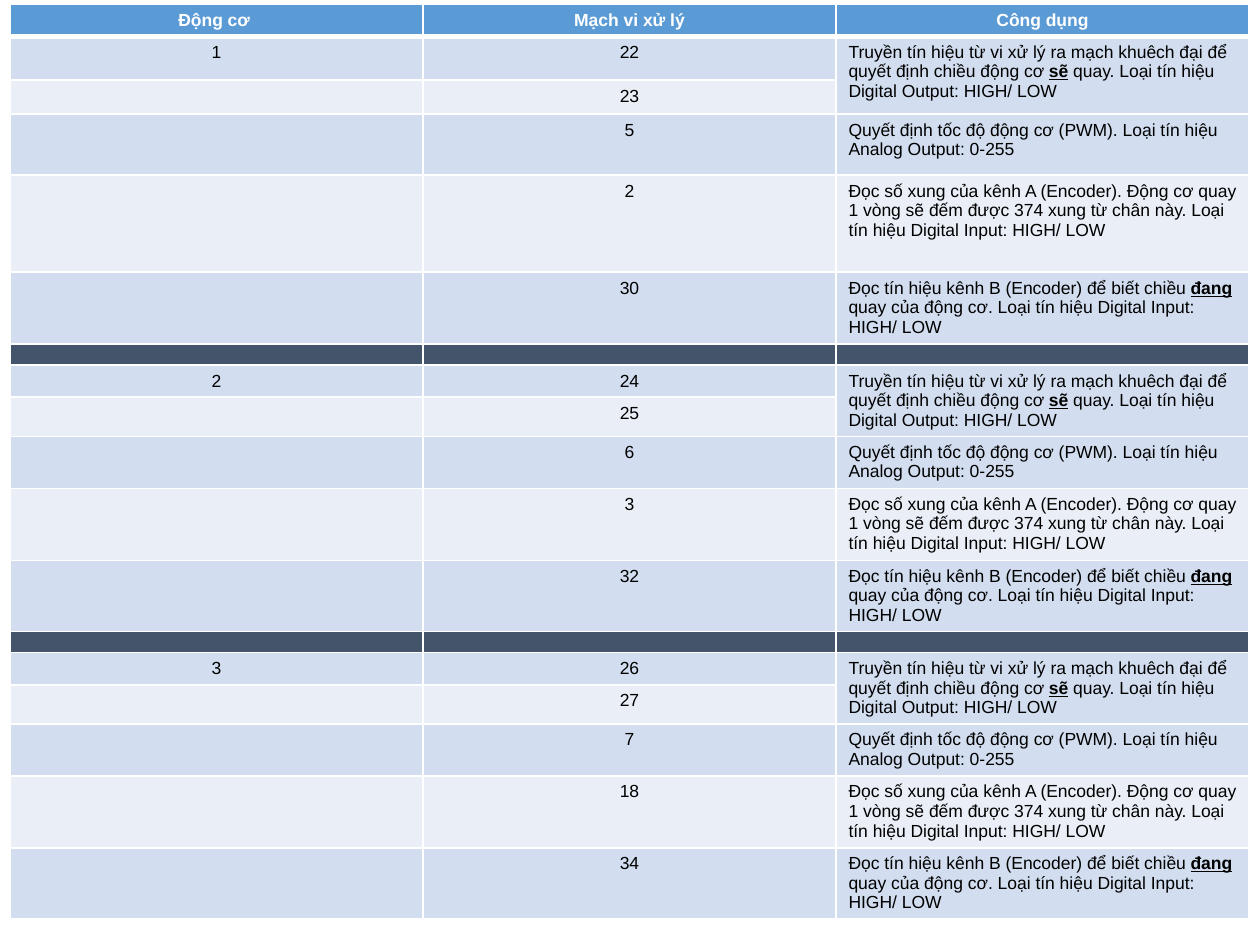
import lxml.etree
import pptx
import pptx.dml.color
import pptx.enum.text
import pptx.oxml.ns
import pptx.util

EMU_PER_PX = 914400 / 126

THEME = {
    "font": "Arial",
    "text_size": 10,
    "divider_size": 4,
    "header": "5B9BD5",
    "bands": ("D2DEEF", "EAEFF7"),
    "divider": "44546A",
    "border": "FFFFFF",
    "header_text": "FFFFFF",
    "body_text": "000000",
}

# Each purpose is a list of (text, emphasised) spans
PURPOSES = [
    [("Truyền tín hiệu từ vi xử lý ra mạch khuêch đại để quyết định chiều động cơ ", False),
     ("sẽ", True),
     (" quay. Loại tín hiệu Digital Output: HIGH/ LOW", False)],
    [],
    [("Quyết định tốc độ động cơ (PWM). Loại tín hiệu Analog Output: 0-255", False)],
    [("Đọc số xung của kênh A (Encoder). Động cơ quay 1 vòng sẽ đếm được 374 xung "
      "từ chân này. Loại tín hiệu Digital Input: HIGH/ LOW", False)],
    [("Đọc tín hiệu kênh B (Encoder) để biết chiều ", False),
     ("đang", True),
     (" quay của động cơ. Loại tín hiệu Digital Input: HIGH/ LOW", False)],
]
MOTOR_PINS = [(22, 23, 5, 2, 30), (24, 25, 6, 3, 32), (26, 27, 7, 18, 34)]

HEADER_HEIGHT = 32
DIVIDER_HEIGHT = 21
FIRST_MOTOR_HEIGHTS = (44, 32, 61, 97, 72)
MOTOR_HEIGHTS = (32, 39, 52, 72, 71)


def px(length):
    return pptx.util.Emu(round(length * EMU_PER_PX))


def fill_cell(cell, spans, color, text_color, size, centered, top=1, bottom=1):
    # Borders come before the fill in the cell properties
    properties = cell._tc.get_or_add_tcPr()
    for side, width in (("L", 1), ("R", 1), ("T", top), ("B", bottom)):
        line = lxml.etree.SubElement(
            properties, pptx.oxml.ns.qn("a:ln" + side), w=str(pptx.util.Pt(width)))
        solid = lxml.etree.SubElement(line, pptx.oxml.ns.qn("a:solidFill"))
        lxml.etree.SubElement(solid, pptx.oxml.ns.qn("a:srgbClr"), val=THEME["border"])
    cell.fill.solid()
    cell.fill.fore_color.rgb = pptx.dml.color.RGBColor.from_string(color)

    para = cell.text_frame.paragraphs[0]
    if centered:
        para.alignment = pptx.enum.text.PP_ALIGN.CENTER
    for text, emphasised in spans:
        span = para.add_run()
        span.text = text
        span.font.name = THEME["font"]
        span.font.size = pptx.util.Pt(size)
        span.font.bold = emphasised
        span.font.underline = emphasised and text_color == THEME["body_text"]
        span.font.color.rgb = pptx.dml.color.RGBColor.from_string(text_color)
    # An empty cell takes its line height from the end mark
    if not spans:
        lxml.etree.SubElement(
            para._p, pptx.oxml.ns.qn("a:endParaRPr"), sz=str(size * 100))


# Row contents: kind, height and the three cells' spans
rows = [("header", HEADER_HEIGHT,
         [[("Động cơ ", True)], [("Mạch vi xử lý", True)], [("Công dụng", True)]])]
for motor, pins in enumerate(MOTOR_PINS, start=1):
    if motor > 1:
        rows.append(("divider", DIVIDER_HEIGHT, [[], [], []]))
    heights = FIRST_MOTOR_HEIGHTS if motor == 1 else MOTOR_HEIGHTS
    for index, (pin, purpose, height) in enumerate(zip(pins, PURPOSES, heights)):
        label = [(str(motor), False)] if index == 0 else []
        kind = "first" if index == 0 else "pin"
        rows.append((kind, height, [label, [(str(pin), False)], purpose]))

# Page
deck = pptx.Presentation()
deck.slide_width = px(1260)
deck.slide_height = px(945)
page = deck.slides.add_slide(deck.slide_layouts[6])

# Wiring table
total_height = sum(height for kind, height, cells in rows)
table = page.shapes.add_table(
    len(rows), 3, px(10), px(4), px(3 * 413), px(total_height)).table
for column in table.columns:
    column.width = px(413)

band = 0
for row_index, (kind, height, cells) in enumerate(rows):
    table.rows[row_index].height = px(height)
    if kind == "first":
        band = 0
    color = THEME[kind] if kind in ("header", "divider") else THEME["bands"][band % 2]
    band += 1
    text_color = THEME["header_text"] if kind == "header" else THEME["body_text"]
    size = THEME["divider_size"] if kind == "divider" else THEME["text_size"]
    for column_index, spans in enumerate(cells):
        fill_cell(table.cell(row_index, column_index), spans, color, text_color, size,
                  centered=kind == "header" or column_index < 2,
                  top=3 if row_index == 1 else 1,
                  bottom=3 if row_index == 0 else 1)

# The two direction pins share one purpose
for row_index, (kind, height, cells) in enumerate(rows):
    if kind == "first":
        table.cell(row_index, 2).merge(table.cell(row_index + 1, 2))

deck.save("out.pptx")
